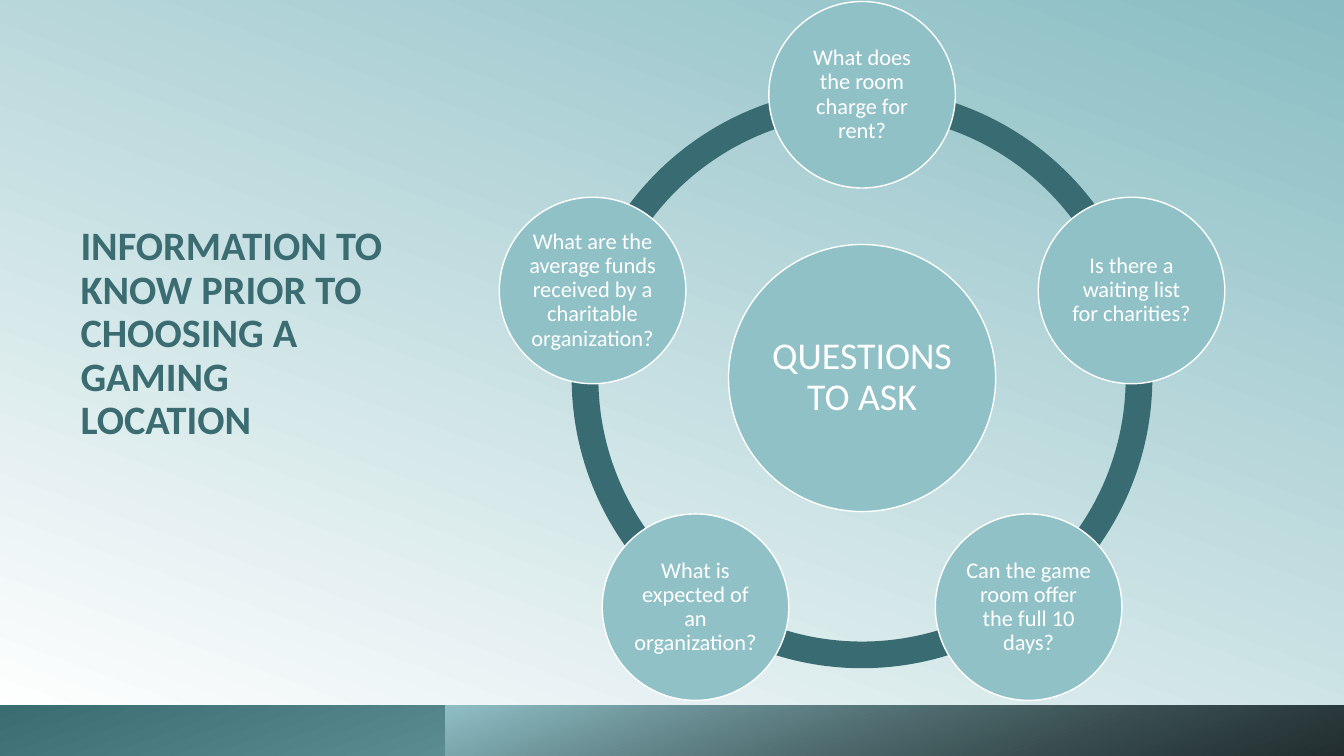
from math import cos, radians, sin

from lxml.etree import SubElement
from pptx import Presentation
from pptx.dml.color import RGBColor
from pptx.enum.shapes import MSO_SHAPE as Shape
from pptx.enum.text import MSO_ANCHOR as Anchor, PP_ALIGN as Align
from pptx.oxml.ns import qn
from pptx.util import Inches, Pt

TEAL = RGBColor(0x3A, 0x6C, 0x72)
RING_TEAL = RGBColor(0x39, 0x6C, 0x72)
AQUA = RGBColor(0x90, 0xC1, 0xC7)
SKY = RGBColor(0x89, 0xBD, 0xC3)
WHITE = RGBColor(0xFF, 0xFF, 0xFF)
BLACK = RGBColor(0x00, 0x00, 0x00)

FONT = "Calibri"
CENTER_X, CENTER_Y = 8.55, 3.75
ORBIT = 2.81
RING_SIZE = 5.76
STEP = 72
TOP_ANGLE = 270

TITLE = "INFORMATION TO KNOW PRIOR TO CHOOSING A GAMING LOCATION"
HUB = "QUESTIONS TO ASK"
QUESTIONS = [
    "What does the room charge for rent?",
    "Is there a waiting list for charities?",
    "Can the game room offer the full 10 days?",
    "What is expected of an organization?",
    "What are the average funds received by a charitable organization?",
]


def set_gradient(fill, stops, angle):
    """Fill with (position, colour, opacity) stops at a clockwise angle."""
    fill.gradient()
    stop_list = fill.gradient_stops._gsLst
    for stop in list(stop_list):
        stop_list.remove(stop)
    for position, color, opacity in stops:
        stop = SubElement(stop_list, qn("a:gs"), pos=str(position * 1000))
        tint = SubElement(stop, qn("a:srgbClr"), val=str(color))
        if opacity < 100:
            SubElement(tint, qn("a:alpha"), val=str(opacity * 1000))
    fill.gradient_angle = 360 - angle


def write_text(frame, text, size, color, bold=False):
    """Put one styled paragraph in a text frame and return it."""
    frame.word_wrap = True
    frame.text = text
    para = frame.paragraphs[0]
    para.line_spacing = 0.9
    font = para.runs[0].font
    font.name, font.size, font.bold = FONT, Pt(size), bold
    font.color.rgb = color
    return para


def add_title(page):
    """Add the bold heading on the left."""
    box = page.shapes.add_textbox(Inches(0.7), Inches(2.19), Inches(3.39), Inches(2.47))
    box.text_frame.vertical_anchor = Anchor.TOP
    write_text(box.text_frame, TITLE, 28.8, TEAL, bold=True)


def add_centered(shapes, preset, x, y, size, color):
    """Add a square-framed filled shape around a centre point."""
    shape = shapes.add_shape(
        preset, Inches(x - size / 2), Inches(y - size / 2), Inches(size), Inches(size)
    )
    shape.shadow.inherit = False
    shape.fill.solid()
    shape.fill.fore_color.rgb = color
    return shape


def add_arc(shapes, start):
    """Add the ring segment that runs one step clockwise from an angle."""
    arc = add_centered(shapes, Shape.BLOCK_ARC, CENTER_X, CENTER_Y, RING_SIZE, RING_TEAL)
    arc.line.fill.background()
    end = (start + STEP) % 360
    arc.adjustments[0] = start * 0.6
    arc.adjustments[1] = end * 0.6
    arc.adjustments[2] = 0.046


def add_circle(shapes, x, y, size, text, font_size, inset):
    """Add an outlined circle with centred text."""
    circle = add_centered(shapes, Shape.OVAL, x, y, size, AQUA)
    circle.line.color.rgb = WHITE
    circle.line.width = Pt(1)
    frame = circle.text_frame
    frame.vertical_anchor = Anchor.MIDDLE
    frame.margin_left = frame.margin_right = Inches(inset)
    frame.margin_top = frame.margin_bottom = Inches(inset)
    write_text(frame, text, font_size, WHITE).alignment = Align.CENTER


def add_cycle(page):
    """Add the ring, its hub and the question circles."""
    angles = [(TOP_ANGLE + STEP * index) % 360 for index in range(len(QUESTIONS))]
    for angle in angles:
        add_arc(page.shapes, angle)
    add_circle(page.shapes, CENTER_X, CENTER_Y, 2.65, HUB, 27, 0.04)
    for angle, question in zip(angles, QUESTIONS):
        x = CENTER_X + ORBIT * cos(radians(angle))
        y = CENTER_Y + ORBIT * sin(radians(angle))
        add_circle(page.shapes, x, y, 1.85, question, 16, 0.02)


def add_footer_bar(page, left, width, stops, angle, rotation=0):
    """Add a mirrored gradient bar along the bottom edge."""
    bar = page.shapes.add_shape(
        Shape.RECTANGLE, Inches(left), Inches(7), Inches(width), Inches(0.5)
    )
    bar.shadow.inherit = False
    bar.line.fill.background()
    set_gradient(bar.fill, stops, angle)
    bar.rotation = rotation
    bar._element.spPr.find(qn("a:xfrm")).set("flipH", "1")


def main():
    """Build the slide and save it."""
    deck = Presentation()
    deck.slide_width, deck.slide_height = Inches(13.33), Inches(7.5)
    page = deck.slides.add_slide(deck.slide_layouts[6])
    backdrop = [(0, SKY, 100), (97, WHITE, 100), (100, SKY, 100)]
    set_gradient(page.background.fill, backdrop, 110)
    add_title(page)
    add_cycle(page)
    add_footer_bar(page, 0, 13.33, [(0, AQUA, 100), (100, TEAL, 100)], 110, 180)
    add_footer_bar(page, 4.42, 8.91, [(0, BLACK, 76), (100, AQUA, 100)], 290)
    deck.save("out.pptx")


if __name__ == "__main__":
    main()
